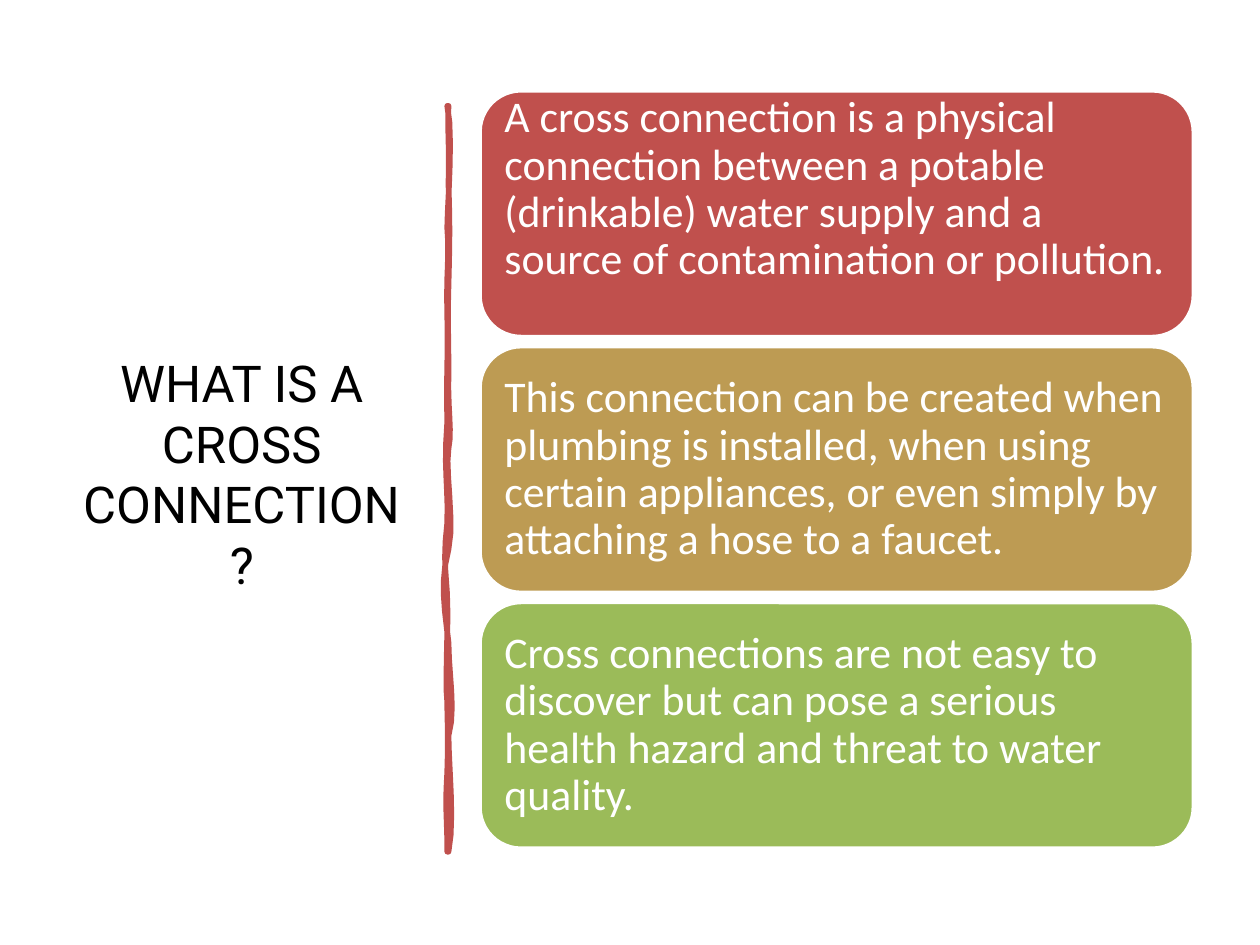
from pptx import Presentation
from pptx.dml.color import RGBColor
from pptx.enum.shapes import MSO_SHAPE as Shape
from pptx.enum.text import MSO_ANCHOR as Anchor, MSO_AUTO_SIZE as Fit, PP_ALIGN as Align
from pptx.util import Pt

RED, GOLD, GREEN, WHITE, BLACK = "C0504D", "BD9B53", "9BBB59", "FFFFFF", "000000"

# Text, fill and upward shift of the text for each card
CARDS = [
    ("A cross connection is a physical connection between a potable (drinkable) "
     "water supply and a source of contamination or pollution.", RED, 13.7),
    ("This connection can be created when plumbing is installed, when using "
     "certain appliances, or even simply by attaching a hose to a faucet.", GOLD, 0),
    ("Cross connections are not easy to discover but can pose a serious health "
     "hazard and threat to water quality.", GREEN, 0),
]

# Curves along each edge of the brush stroke: two control points as
# (offset from edge, height), then the height of the end point
RIGHT = [
    (-0.7, 13.7, 0.7, 23, 44.6), (0.7, 64.8, 0.7, 77, 102.2),
    (-0.7, 125.3, 0, 128.2, 151.2), (-0.7, 173.5, 2.2, 185.8, 195.8),
    (-2.2, 207.4, 3.6, 237.6, 253.4), (-5, 272.2, -2.2, 287.3, 306.7),
    (0, 324.7, 4.3, 344.9, 360), (0, 375.8, 3.6, 409.7, 426.2),
]
LEFT = [
    (0, 403.9, -1.4, 403.2, 380.9), (0.7, 359.3, 0, 350.6, 340.6),
    (-1.4, 332.6, 0.7, 295.2, 283), (0, 272.2, -2.9, 261.4, 238.3),
    (0.7, 217.4, -2.2, 208.1, 180.7), (-0.7, 155.5, 0.7, 140.4, 119.5),
    (-0.7, 95, 1.4, 85.7, 69.8), (0, 58.3, 3.6, 14.4, 0),
]


def color(code):
    return RGBColor.from_string(code)


def paint(shape, fill, line, width):
    shape.shadow.inherit = False
    shape.fill.solid()
    shape.fill.fore_color.rgb = color(fill)
    shape.line.color.rgb = color(line)
    shape.line.width = Pt(width)


def style(para, name, size, code):
    para.font.name = name
    para.font.size = Pt(size)
    para.font.color.rgb = color(code)


def add_title(slide, x, y, w, h):
    title = slide.shapes.title
    title.left, title.top, title.width, title.height = Pt(x), Pt(y), Pt(w), Pt(h)
    frame = title.text_frame
    frame.text = "WHAT IS A CROSS CONNECTION?"
    frame.word_wrap = True
    frame.auto_size = Fit.NONE
    frame.vertical_anchor = Anchor.MIDDLE
    para = frame.paragraphs[0]
    para.alignment = Align.CENTER
    style(para, "Roboto", 29, BLACK)


def trace(edge, start, curves, steps=6):
    """Return points along cubic curves that begin and end on one edge."""
    points = []
    for dx1, y1, dx2, y2, end in curves:
        for i in range(1, steps + 1):
            t = i / steps
            u = 1 - t
            a, b = 3 * u * u * t, 3 * u * t * t
            points.append((Pt(edge + a * dx1 + b * dx2),
                           Pt(u**3 * start + a * y1 + b * y2 + t**3 * end)))
        start = end
    return points


def add_stroke(slide, x, y, w, h):
    points = trace(w, 0, RIGHT) + [(0, Pt(h))] + trace(0, h, LEFT)
    pen = slide.shapes.build_freeform(Pt(w), 0)
    pen.add_line_segments(points, close=True)
    paint(pen.convert_to_shape(Pt(x), Pt(y)), RED, RED, 3.25)


def add_card(slide, x, y, w, h, text, fill, lift):
    card = slide.shapes.add_shape(Shape.ROUNDED_RECTANGLE, Pt(x), Pt(y), Pt(w), Pt(h))
    paint(card, fill, WHITE, 2)
    # Text sits inside the rounded corners
    pad = 6.9
    box = slide.shapes.add_textbox(Pt(x + pad), Pt(y + pad - lift),
                                   Pt(w - 2 * pad), Pt(h - 2 * pad))
    frame = box.text_frame
    frame.word_wrap = True
    frame.vertical_anchor = Anchor.MIDDLE
    frame.margin_left = frame.margin_right = Pt(7.2)
    frame.margin_top = frame.margin_bottom = Pt(7.2)
    frame.text = text
    para = frame.paragraphs[0]
    para.line_spacing = 0.9
    style(para, "Calibri", 25, WHITE)


def add_cards(slide, x, y, w, h, gap=5.8):
    tall = (h - gap * (len(CARDS) - 1)) / len(CARDS)
    for i, card in enumerate(CARDS):
        add_card(slide, x, y + i * (tall + gap), w, tall, *card)


def main():
    deck = Presentation()
    deck.slide_width, deck.slide_height = Pt(720), Pt(540)
    slide = deck.slides.add_slide(deck.slide_layouts[5])
    add_title(slide, 37.4, 50.4, 201.6, 440)
    add_stroke(slide, 255.6, 60.5, 0.7, 426.2)
    add_cards(slide, 274.3, 51.9, 407.6, 432.8)
    deck.save("out.pptx")


if __name__ == "__main__":
    main()
